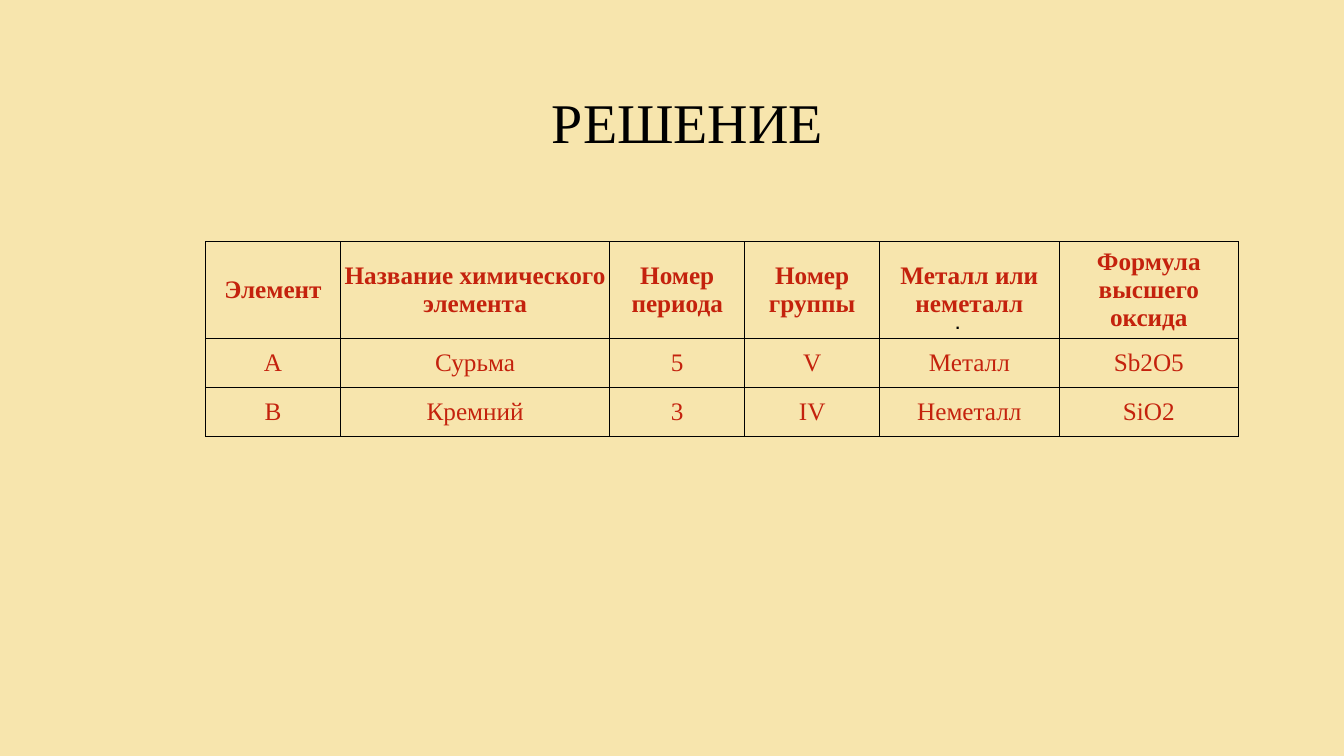
from dataclasses import dataclass

import pptx
import pptx.dml.color
import pptx.enum.text
import pptx.oxml
import pptx.oxml.ns
import pptx.util

Pt = pptx.util.Pt


@dataclass(frozen=True)
class Theme:
    background: str = "F7E5AD"
    ink: str = "000000"
    accent: str = "C4220D"
    serif: str = "Times New Roman"
    sans: str = "DejaVu Sans"
    title_size: float = 40
    table_size: float = 18
    mark_size: float = 9
    border: float = 0.6
    cell_inset: float = 2.16


class SlideBuilder:
    def __init__(self, deck, theme):
        self.theme = theme
        self.slide = deck.slides.add_slide(deck.slide_layouts[6])
        background = self.slide.background.fill
        background.solid()
        background.fore_color.rgb = self.rgb(theme.background)

    def rgb(self, code):
        return pptx.dml.color.RGBColor.from_string(code)

    def add_words(self, frame, words, font, size, color, bold=False, centred=True):
        line = frame.paragraphs[0]
        align = pptx.enum.text.PP_ALIGN
        line.alignment = align.CENTER if centred else align.LEFT
        run = line.add_run()
        run.text = words
        run.font.name = font
        run.font.size = Pt(size)
        run.font.bold = bold
        run.font.color.rgb = self.rgb(color)
        return line

    def box(self, left, top, width, height, anchor):
        frame = self.slide.shapes.add_textbox(
            Pt(left), Pt(top), Pt(width), Pt(height)).text_frame
        frame.word_wrap = True
        frame.vertical_anchor = anchor
        return frame

    def title(self, words, left, top, width, height, bottom_inset):
        frame = self.box(left, top, width, height, pptx.enum.text.MSO_ANCHOR.MIDDLE)
        frame.margin_bottom = Pt(bottom_inset)
        heading = self.add_words(frame, words, self.theme.serif,
                                 self.theme.title_size, self.theme.ink)
        heading.line_spacing = 0.9

    def mark(self, words, left, top, width, height, left_inset):
        frame = self.box(left, top, width, height, pptx.enum.text.MSO_ANCHOR.TOP)
        frame.margin_left = Pt(left_inset)
        self.add_words(frame, words, self.theme.sans, self.theme.mark_size,
                       self.theme.ink, bold=True, centred=False)

    def outline(self, cell):
        properties = cell._tc.get_or_add_tcPr()
        for position, side in enumerate(("lnL", "lnR", "lnT", "lnB")):
            properties.insert(position, pptx.oxml.parse_xml(
                f'<a:{side} {pptx.oxml.ns.nsdecls("a")} w="{Pt(self.theme.border)}">'
                f'<a:solidFill><a:srgbClr val="{self.theme.ink}"/></a:solidFill>'
                f'</a:{side}>'))

    def table(self, rows, left, top, widths, heights):
        grid = self.slide.shapes.add_table(
            len(rows), len(widths), Pt(left), Pt(top),
            Pt(sum(widths)), Pt(sum(heights))).table
        grid.first_row = grid.horz_banding = False
        for column, width in zip(grid.columns, widths):
            column.width = Pt(width)
        for row, height in zip(grid.rows, heights):
            row.height = Pt(height)
        inset = Pt(self.theme.cell_inset)
        for r, row in enumerate(rows):
            for c, words in enumerate(row):
                cell = grid.cell(r, c)
                cell.fill.background()
                cell.vertical_anchor = pptx.enum.text.MSO_ANCHOR.MIDDLE
                cell.margin_left = cell.margin_right = inset
                cell.margin_top = cell.margin_bottom = inset
                self.outline(cell)
                self.add_words(cell.text_frame, words, self.theme.serif,
                               self.theme.table_size, self.theme.accent, bold=r == 0)


def main():
    deck = pptx.Presentation()
    deck.slide_width, deck.slide_height = Pt(960), Pt(540)
    solution = SlideBuilder(deck, Theme())
    solution.title("РЕШЕНИЕ", 152, 61.2, 678, 101.5, bottom_inset=49)
    elements = [
        ("Элемент", "Название химического элемента", "Номер периода",
         "Номер группы", "Металл или неметалл", "Формула высшего оксида"),
        ("A", "Сурьма", "5", "V", "Металл", "Sb2O5"),
        ("B", "Кремний", "3", "IV", "Неметалл", "SiO2"),
    ]
    solution.table(elements, 146.8, 172.4,
                   widths=[96.4, 192.4, 96.4, 96.4, 128.2, 128.2],
                   heights=[60, 35, 35])
    solution.mark(".", 663, 222.5, 57.6, 54.7, left_inset=19.4)
    deck.save("out.pptx")


if __name__ == "__main__":
    main()
